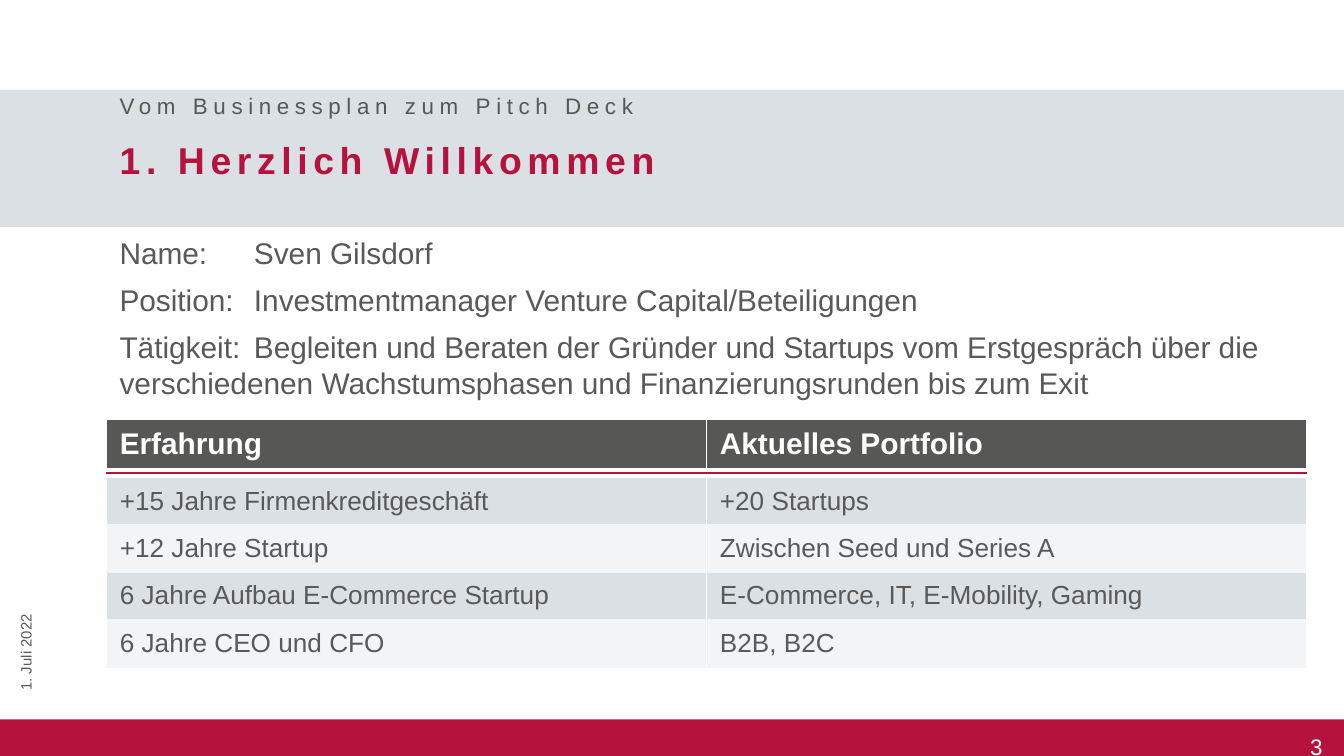
import pptx
import pptx.dml.color
import pptx.enum.shapes
import pptx.enum.text
import pptx.oxml
import pptx.oxml.ns
import pptx.util

Pt = pptx.util.Pt
ANCHOR = pptx.enum.text.MSO_ANCHOR
ALIGN = pptx.enum.text.PP_ALIGN

THEME = {
    "font": "Arial",
    "red": "B5123E", "band": "DAE0E3", "pale": "F2F4F6", "dark": "575756",
    "body": "595959", "white": "FFFFFF",
    "title": 20, "intro": 16, "cell": 14, "small": 12, "date": 8, "spacer": 1,
}

TITLE = "1. Herzlich Willkommen"
KICKER = "Vom Businessplan zum Pitch Deck"
DATE = "1. Juli 2022"
PAGE = "3"
PROFILE = [
    ("Name:", "Sven Gilsdorf"),
    ("Position:", "Investmentmanager Venture Capital/Beteiligungen"),
    ("Tätigkeit:", "Begleiten und Beraten der Gründer und Startups vom Erstgespräch "
                   "über die verschiedenen Wachstumsphasen und Finanzierungsrunden bis zum Exit"),
]
HEADINGS = ("Erfahrung", "Aktuelles Portfolio")
EXPERIENCE = [
    ("+15 Jahre Firmenkreditgeschäft", "+20 Startups"),
    ("+12 Jahre Startup", "Zwischen Seed und Series A"),
    ("6 Jahre Aufbau E-Commerce Startup", "E-Commerce, IT, E-Mobility, Gaming"),
    ("6 Jahre CEO und CFO", "B2B, B2C"),
]

WIDTH, HEIGHT = 720, 405
LEFT, CONTENT_WIDTH = 57, 643
HEAD_HEIGHT, ROW_HEIGHT, SPACER_HEIGHT = 25.7, 25.4, 2.4


def rgb(name):
    return pptx.dml.color.RGBColor.from_string(THEME[name])


def add_run(paragraph, text, size, color, bold=False, tracking=0):
    run = paragraph.add_run()
    run.text = text
    run.font.name = THEME["font"]
    run.font.size = Pt(THEME[size])
    run.font.bold = bold
    run.font.color.rgb = rgb(color)
    if tracking:
        run.font._element.set("spc", str(tracking * 100))


def add_band(slide, top, height, color):
    band = slide.shapes.add_shape(pptx.enum.shapes.MSO_SHAPE.RECTANGLE,
                                  0, Pt(top), Pt(WIDTH), Pt(height))
    band.shadow.inherit = False
    band.fill.solid()
    band.fill.fore_color.rgb = rgb(color)
    band.line.fill.background()


def add_box(slide, left, top, width, height, anchor=ANCHOR.MIDDLE):
    box = slide.shapes.add_textbox(Pt(left), Pt(top), Pt(width), Pt(height))
    box.text_frame.word_wrap = True
    box.text_frame.vertical_anchor = anchor
    return box


def add_border(cell, side, color):
    cell._tc.get_or_add_tcPr().append(pptx.oxml.parse_xml(
        f'<a:ln{side} {pptx.oxml.ns.nsdecls("a")} w="12700"><a:solidFill>'
        f'<a:srgbClr val="{THEME[color]}"/></a:solidFill></a:ln{side}>'))


def fill_cell(cell, text, size, color, fill, bold=False):
    cell.vertical_anchor = ANCHOR.MIDDLE
    cell.fill.solid()
    cell.fill.fore_color.rgb = rgb(fill)
    add_run(cell.text_frame.paragraphs[0], text, size, color, bold)


def shrink_spacer(cell):
    cell.margin_left = cell.margin_right = cell.margin_top = cell.margin_bottom = 0
    cell.fill.background()
    cell.text_frame.paragraphs[0]._p.append(pptx.oxml.parse_xml(
        f'<a:endParaRPr {pptx.oxml.ns.nsdecls("a")} sz="{THEME["spacer"] * 100}"/>'))


def add_experience_table(slide):
    rows = [HEADINGS, None, None] + EXPERIENCE
    heights = [HEAD_HEIGHT] + [SPACER_HEIGHT] * 2 + [ROW_HEIGHT] * len(EXPERIENCE)
    table = slide.shapes.add_table(len(rows), len(HEADINGS), Pt(LEFT), Pt(224.5),
                                   Pt(CONTENT_WIDTH), Pt(sum(heights))).table
    table.first_row = table.horz_banding = False
    for row, height in zip(table.rows, heights):
        row.height = Pt(height)
    for r, texts in enumerate(rows):
        for c in range(len(HEADINGS)):
            cell = table.cell(r, c)
            if texts:
                add_border(cell, "R" if c == 0 else "L", "white")
            if r == 2:
                add_border(cell, "T", "red")
            if r > 3:
                add_border(cell, "T", "pale")
            if r == 1 or r > 2:
                add_border(cell, "B", "red" if r == 1 else "pale")
            if texts is None:
                shrink_spacer(cell)
            elif r == 0:
                fill_cell(cell, texts[c], "intro", "white", "dark", True)
            else:
                fill_cell(cell, texts[c], "cell", "body", "band" if r % 2 else "pale")


def main():
    deck = pptx.Presentation()
    deck.slide_width, deck.slide_height = Pt(WIDTH), Pt(HEIGHT)
    slide = deck.slides.add_slide(deck.slide_layouts[6])

    add_band(slide, 385.4, HEIGHT - 385.4, "red")
    number = add_box(slide, 618, 379, 90.5, 28).text_frame
    number.margin_left = number.margin_right = number.margin_top = number.margin_bottom = 0
    number.paragraphs[0].alignment = ALIGN.RIGHT
    number.paragraphs[0].line_spacing = Pt(28)
    add_run(number.paragraphs[0], PAGE, "small", "white")

    add_band(slide, 48.2, 73.4, "band")
    title = add_box(slide, LEFT, 69.4, WIDTH - LEFT, 32)
    add_run(title.text_frame.paragraphs[0], TITLE, "title", "red", True, 3)
    kicker = add_box(slide, LEFT, 48.2, WIDTH - LEFT, 17.3)
    add_run(kicker.text_frame.paragraphs[0], KICKER, "small", "dark", tracking=3)

    date = add_box(slide, -30.2, 324.7, 87.8, 17)
    date.rotation = 270
    add_run(date.text_frame.paragraphs[0], DATE, "date", "body")

    add_experience_table(slide)

    profile = add_box(slide, LEFT, 122.4, CONTENT_WIDTH, 97, ANCHOR.TOP).text_frame
    for i, (label, value) in enumerate(PROFILE):
        paragraph = profile.add_paragraph() if i else profile.paragraphs[0]
        if i < len(PROFILE) - 1:
            paragraph.space_after = Pt(6)
        add_run(paragraph, f"{label}\t{value}", "intro", "body")

    deck.save("out.pptx")


if __name__ == "__main__":
    main()
